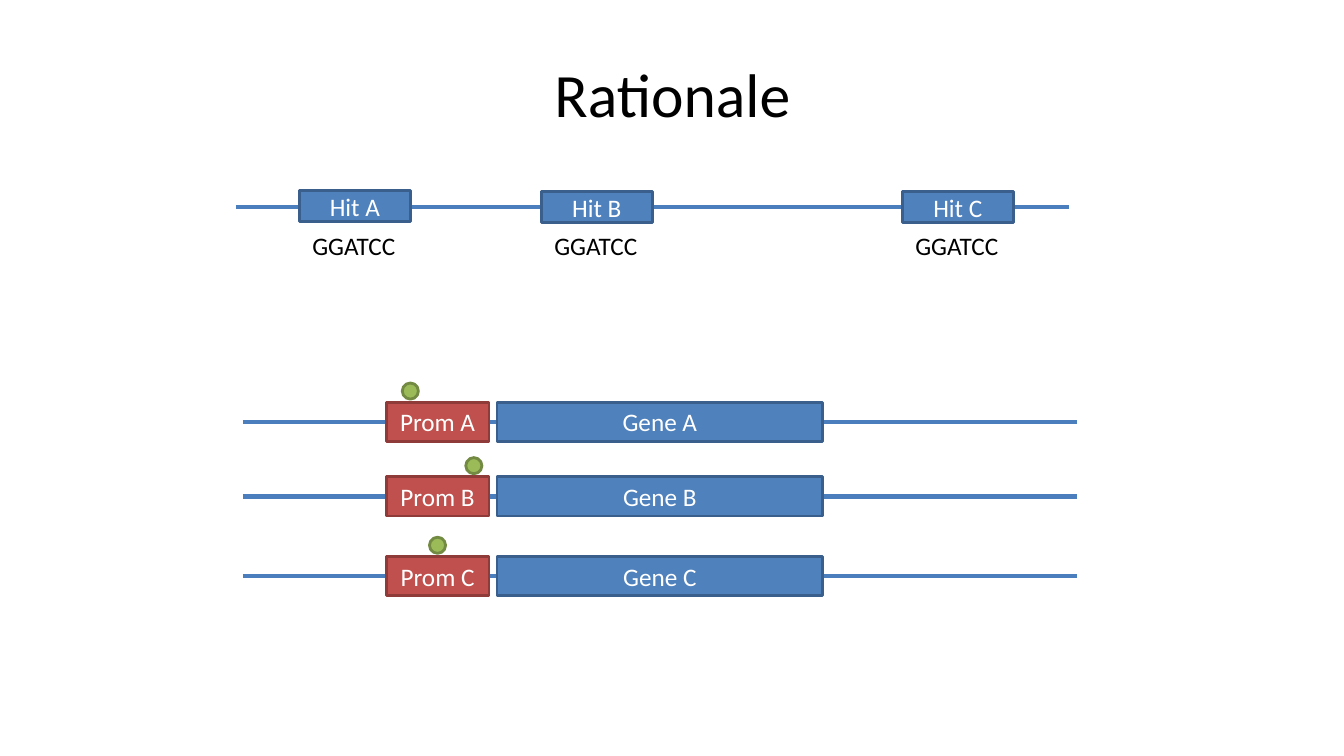
from lxml import etree
from pptx import Presentation
from pptx import util as u
from pptx.dml.color import RGBColor
from pptx.enum import shapes, text
from pptx.oxml.ns import qn

WHITE = RGBColor(0xFF, 0xFF, 0xFF)
BLACK = RGBColor(0x00, 0x00, 0x00)
BLUE = RGBColor(0x4F, 0x81, 0xBD)
NAVY = RGBColor(0x3A, 0x5F, 0x8C)
STRAND = RGBColor(0x4B, 0x7E, 0xBC)
RED = RGBColor(0xC0, 0x50, 0x4D)
WINE = RGBColor(0x8E, 0x3B, 0x39)
GREEN = RGBColor(0x9B, 0xBB, 0x59)
OLIVE = RGBColor(0x73, 0x8A, 0x42)


class Board:
    """Draws styled elements on a slide, measured in grid cells of a tenth of an inch."""

    cell = u.Inches(0.1)
    font = "Calibri"
    size = 18
    edge = 2
    thick = 3

    def __init__(self, slide):
        self.items = slide.shapes

    def grid(self, *cells):
        return [round(n * self.cell) for n in cells]

    def letter(self, frame, words, color, size, align):
        frame.text = words
        para = frame.paragraphs[0]
        para.alignment = align
        font = para.runs[0].font
        font.name, font.size = self.font, u.Pt(size)
        font.color.rgb = color

    def label(self, col, row, wide, high, words, size=size, title=False):
        frame = self.items.add_textbox(*self.grid(col, row, wide, high)).text_frame
        frame.word_wrap = title
        if title:
            frame.vertical_anchor = text.MSO_ANCHOR.MIDDLE
        else:
            frame.auto_size = text.MSO_AUTO_SIZE.SHAPE_TO_FIT_TEXT
        align = text.PP_ALIGN.CENTER if title else text.PP_ALIGN.LEFT
        self.letter(frame, words, BLACK, size, align)

    def shape(self, kind, col, row, wide, high, fill, line):
        item = self.items.add_shape(kind, *self.grid(col, row, wide, high))
        item.shadow.inherit = False
        item.fill.solid()
        item.fill.fore_color.rgb = fill
        item.line.color.rgb = line
        item.line.width = u.Pt(self.edge)
        return item

    def box(self, col, row, wide, high, words, fill=BLUE, line=NAVY):
        item = self.shape(shapes.MSO_SHAPE.RECTANGLE, col, row, wide, high, fill, line)
        frame = item.text_frame
        frame.vertical_anchor = text.MSO_ANCHOR.MIDDLE
        self.letter(frame, words, WHITE, self.size, text.PP_ALIGN.CENTER)

    def dot(self, col, row, wide):
        self.shape(shapes.MSO_SHAPE.OVAL, col, row, wide, wide, GREEN, OLIVE)

    def strand(self, col, row, wide):
        ends = self.grid(col, row, col + wide, row)
        line = self.items.add_connector(shapes.MSO_CONNECTOR.STRAIGHT, *ends)
        line.line.color.rgb = STRAND
        line.line.width = u.Pt(self.thick)
        etree.SubElement(line._element.spPr, qn("a:effectLst"))


def main():
    deck = Presentation()
    deck.slide_width, deck.slide_height = u.Inches(13.33), u.Inches(7.5)
    board = Board(deck.slides.add_slide(deck.slide_layouts[6]))
    board.label(6.7, 3, 120, 12.5, "Rationale", 44, title=True)

    board.strand(23.4, 20.5, 82.6)
    for name, col, row in (("A", 29.7, 18.9), ("B", 53.7, 19), ("C", 89.5, 19)):
        board.box(col, row, 11, 3.1, f"Hit {name}")
        board.label(col + 0.3, 22.4, 10.3, 4, "GGATCC")

    high = 3.9
    for name, row, site in (("A", 39.9, 39.9), ("B", 47.3, 46.2), ("C", 55.2, 42.6)):
        board.strand(24.1, row + high / 2, 82.7)
        board.box(49.3, row, 32.3, high, f"Gene {name}")
        board.box(38.3, row, 10.2, high, f"Prom {name}", RED, WINE)
        board.dot(site, row - 1.9, 1.6)

    deck.save("out.pptx")


if __name__ == "__main__":
    main()
